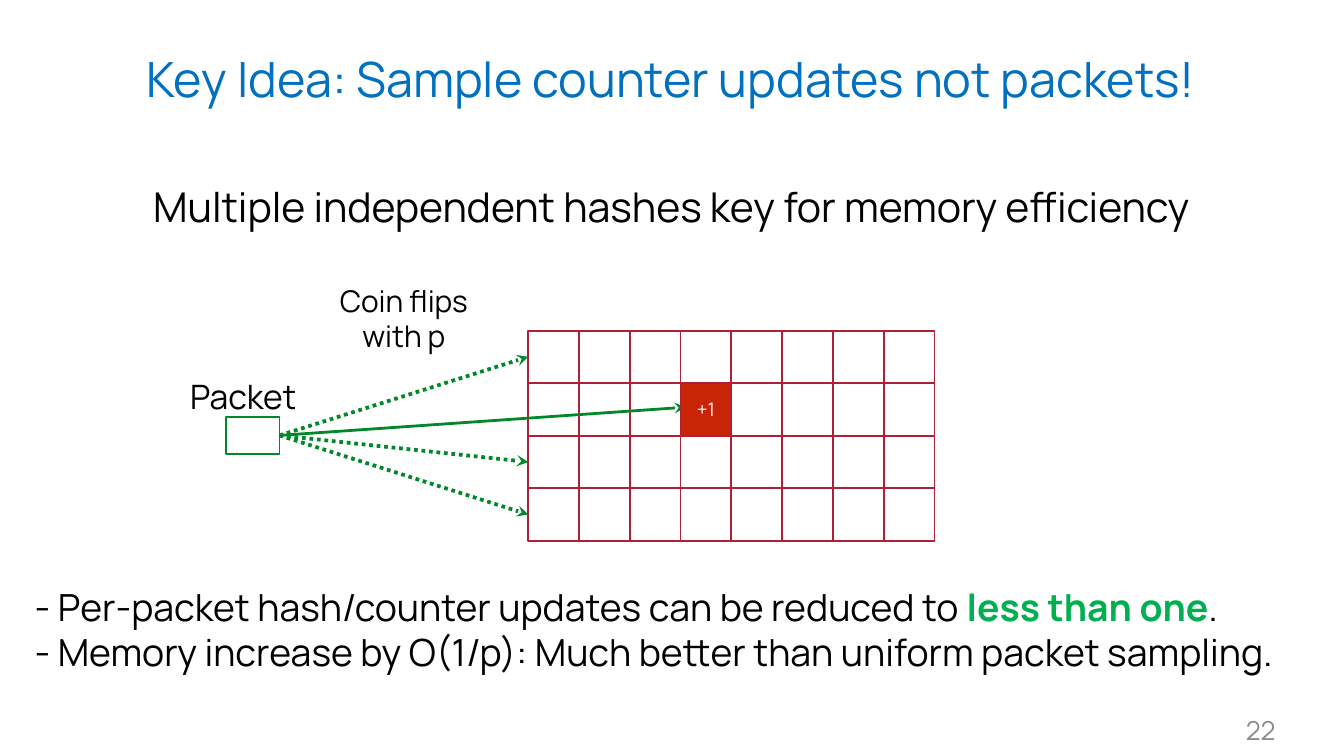
from dataclasses import dataclass
from itertools import product

from lxml.etree import SubElement
from pptx import Presentation
from pptx.dml.color import RGBColor
from pptx.enum.dml import MSO_LINE
from pptx.enum.shapes import MSO_CONNECTOR, MSO_SHAPE
from pptx.enum.text import MSO_ANCHOR, PP_ALIGN
from pptx.oxml.ns import qn
from pptx.util import Inches, Pt


@dataclass(frozen=True)
class Theme:
    font: str = "Manrope"
    title: str = "0070C0"
    ink: str = "000000"
    muted: str = "8C8C8C"
    paper: str = "FFFFFF"
    counter: str = "AE2035"
    updated: str = "C82506"
    packet: str = "00882B"
    emphasis: str = "00B050"
    title_size: float = 26
    subtitle_size: float = 22
    body_size: float = 20
    label_size: float = 18
    note_size: float = 16
    number_size: float = 14
    cell_size: float = 10


class SketchSlide:
    columns, rows = 100, 56.25

    def __init__(self, deck, theme):
        self.theme = theme
        self.column = deck.slide_width / self.columns
        self.row = deck.slide_height / self.rows
        self.shapes = deck.slides.add_slide(deck.slide_layouts[6]).shapes

    def place(self, left, top, width, height):
        return (round(left * self.column), round(top * self.row),
                round(width * self.column), round(height * self.row))

    def style(self, paragraph, size, color, align):
        paragraph.alignment = align
        paragraph.font.name = self.theme.font
        paragraph.font.size = Pt(size)
        paragraph.font.color.rgb = RGBColor.from_string(color)

    def text(self, area, lines, size, color, align=PP_ALIGN.CENTER,
             anchor=MSO_ANCHOR.TOP, margin=0.05):
        frame = self.shapes.add_textbox(*self.place(*area)).text_frame
        frame.word_wrap = True
        frame.vertical_anchor = anchor
        frame.margin_top = frame.margin_bottom = Inches(margin)
        for index, line in enumerate(lines):
            paragraph = frame.paragraphs[0] if index == 0 else frame.add_paragraph()
            self.style(paragraph, size, color, align)
            for part, strong in line:
                run = paragraph.add_run()
                run.text = part
                if strong:
                    run.font.bold = True
                    run.font.color.rgb = RGBColor.from_string(self.theme.emphasis)

    def box(self, area, fill, outline, label=""):
        box = self.shapes.add_shape(MSO_SHAPE.RECTANGLE, *self.place(*area))
        box.shadow.inherit = False
        box.fill.solid()
        box.fill.fore_color.rgb = RGBColor.from_string(fill)
        box.line.color.rgb = RGBColor.from_string(outline)
        box.line.width = Pt(1)
        if label:
            frame = box.text_frame
            frame.vertical_anchor = MSO_ANCHOR.MIDDLE
            frame.text = label
            self.style(frame.paragraphs[0], self.theme.cell_size, self.theme.paper,
                       PP_ALIGN.CENTER)

    def arrow(self, start, end, width, dash=None):
        arrow = self.shapes.add_connector(
            MSO_CONNECTOR.STRAIGHT, *self.place(*start, *end))
        arrow.line.color.rgb = RGBColor.from_string(self.theme.packet)
        arrow.line.width = Pt(width)
        if dash:
            arrow.line.dash_style = dash
        SubElement(arrow.line._get_or_add_ln(), qn("a:tailEnd"), type="stealth")
        SubElement(arrow._element.spPr, qn("a:effectLst"))


def plain(*lines):
    return [[(line, False)] for line in lines]


def main():
    deck = Presentation()
    deck.slide_width, deck.slide_height = Inches(10), Inches(5.625)
    theme = Theme()
    slide = SketchSlide(deck, theme)

    slide.text((0, 1.1, 100, 9.4),
               plain("Key Idea: Sample counter updates not packets!"),
               theme.title_size, theme.title, anchor=MSO_ANCHOR.MIDDLE)
    slide.text((91.1, 52.4, 4.8, 3.8), plain("22"), theme.number_size, theme.muted,
               PP_ALIGN.RIGHT, MSO_ANCHOR.MIDDLE)
    slide.text((8.9, 13, 82.1, 4.7),
               plain("Multiple independent hashes key for memory efficiency"),
               theme.subtitle_size, theme.ink)

    sketch_left, sketch_top = 39.3, 24.6
    cell_width, cell_height = 3.78, 3.91
    hash_rows, counters = 4, 8
    updated_cell = (1, 3)

    def cell_area(row, counter):
        return (sketch_left + counter * cell_width, sketch_top + row * cell_height,
                cell_width, cell_height)

    for cell in product(range(hash_rows), range(counters)):
        if cell != updated_cell:
            slide.box(cell_area(*cell), theme.paper, theme.counter)

    slide.box((16.8, 31, 4, 2.8), theme.paper, theme.packet)
    slide.text((11.8, 27.45, 12.6, 2.8), plain("Packet"), theme.label_size, theme.ink)
    slide.text((21.6, 20, 16.9, 3), plain("Coin flips", "with p"),
               theme.note_size, theme.ink, margin=0.1)

    packet_exit = (20.8, 32.4)
    slide.arrow(packet_exit, (51, 30.3), 1.5)
    slide.box(cell_area(*updated_cell), theme.updated, theme.counter, "+1")
    for row in range(hash_rows):
        if row != updated_cell[0]:
            row_middle = sketch_top + (row + 0.5) * cell_height
            slide.arrow(packet_exit, (sketch_left, row_middle), 2, MSO_LINE.ROUND_DOT)

    findings = [
        [("- Per-packet hash/counter updates can be reduced to ", False),
         ("less than one", True), (".", False)],
        *plain("- Memory increase by O(1/p): Much better than uniform packet sampling."),
    ]
    slide.text((1.6, 42.5, 97, 6.9), findings, theme.body_size, theme.ink,
               PP_ALIGN.LEFT, margin=0.1)

    deck.save("out.pptx")


if __name__ == "__main__":
    main()
